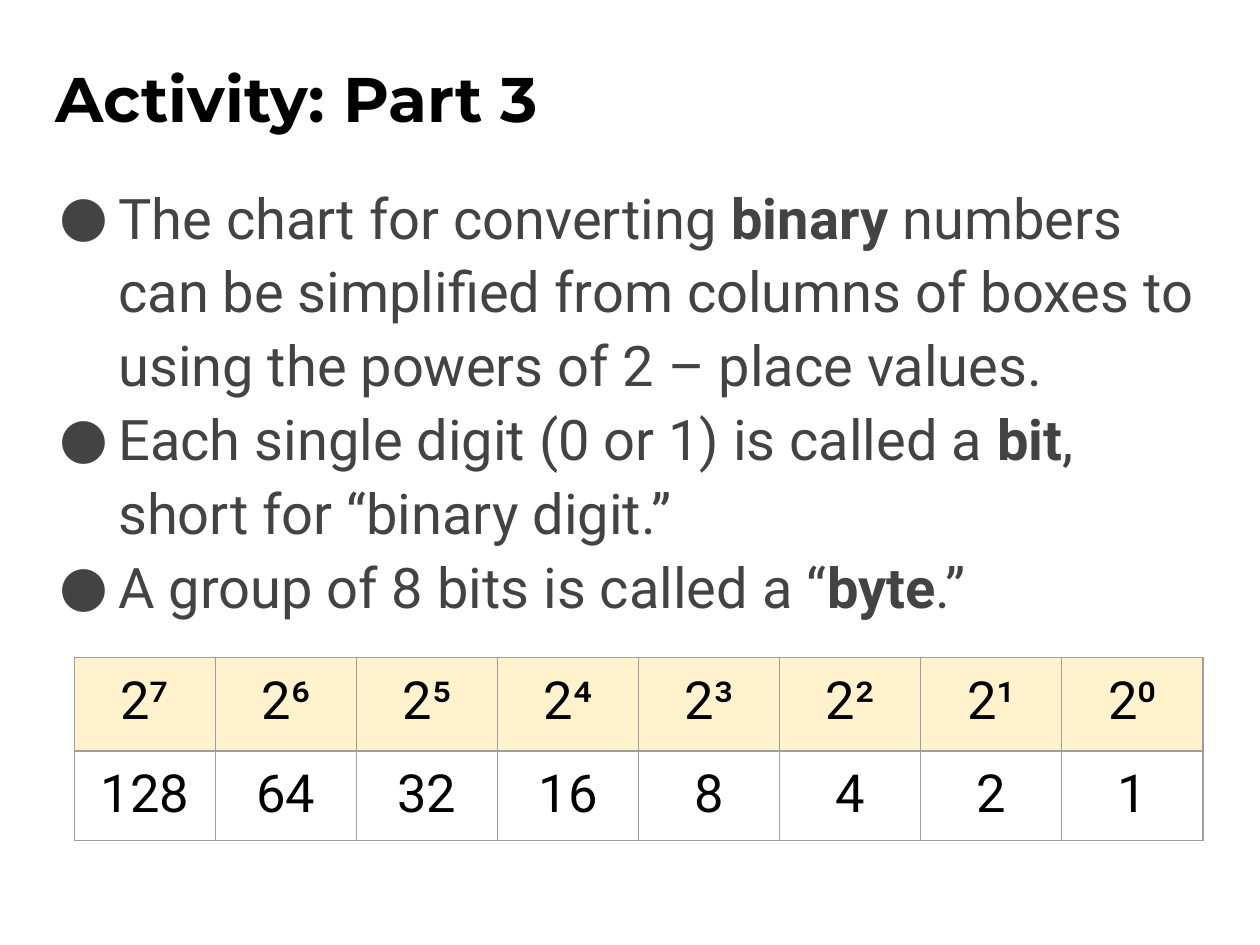
import dataclasses

import pptx
import pptx.dml.color
import pptx.enum.text
import pptx.oxml
import pptx.oxml.ns
import pptx.util
from lxml import etree


@dataclasses.dataclass(frozen=True)
class Theme:
    title_font: str = "Montserrat"
    body_font: str = "Roboto"
    ink: str = "000000"
    body_ink: str = "434343"
    header_fill: str = "FFF2CC"
    rule: str = "9E9E9E"
    title_size: int = 36
    body_size: int = 32
    table_size: int = 30
    rule_width: float = 0.75


THEME = Theme()
WIDTH, HEIGHT = 10, 7.5
MARGIN = 0.34
CONTENT_WIDTH = WIDTH - 2 * MARGIN
BIT_COUNT = 8
COLUMN_WIDTH = 1.12
ROW_HEIGHTS = (0.74, 0.71)
SUPERSCRIPTS = "⁰¹²³⁴⁵⁶⁷"
BULLETS = (
    ("The chart for converting ", "binary",
     " numbers can be simplified from columns of boxes to using the powers of 2 – place values."),
    ("Each single digit (0 or 1) is called a ", "bit", ", short for “binary digit.”"),
    ("A group of 8 bits is called a “", "byte", ".”"),
)


def inches(*lengths):
    return [pptx.util.Inches(length) for length in lengths]


def style_span(span, font, size, color, bold=False):
    span.font.name = font
    span.font.size = pptx.util.Pt(size)
    span.font.bold = bold
    span.font.color.rgb = pptx.dml.color.RGBColor.from_string(color)


def add_xml(parent, tag, **attributes):
    return etree.SubElement(parent, pptx.oxml.ns.qn(tag), attributes)


def add_title(page, text):
    title = page.shapes.title
    title.left, title.top, title.width, title.height = inches(MARGIN, 0.32, CONTENT_WIDTH, 0.91)
    frame = title.text_frame
    frame.text = text
    frame.vertical_anchor = pptx.enum.text.MSO_ANCHOR.MIDDLE
    para = frame.paragraphs[0]
    para.alignment = pptx.enum.text.PP_ALIGN.LEFT
    style_span(para.runs[0], THEME.title_font, THEME.title_size, THEME.ink, True)


def format_bullet(para):
    para.line_spacing = 1.1
    properties = para._p.get_or_add_pPr()
    left, indent = inches(0.5, -0.47)
    properties.set("marL", str(left))
    properties.set("indent", str(indent))
    color = add_xml(properties, "a:buClr")
    add_xml(color, "a:srgbClr", val=THEME.body_ink)
    add_xml(properties, "a:buFont", typeface=THEME.body_font)
    add_xml(properties, "a:buChar", char="●")


def add_bullets(page, bullets):
    box = page.shapes.add_textbox(*inches(MARGIN, 1.35, CONTENT_WIDTH, 4.98))
    frame = box.text_frame
    frame.word_wrap = True
    for index, parts in enumerate(bullets):
        para = frame.add_paragraph() if index else frame.paragraphs[0]
        format_bullet(para)
        for position, text in enumerate(parts):
            span = para.add_run()
            span.text = text
            style_span(span, THEME.body_font, THEME.body_size, THEME.body_ink, position == 1)


def add_borders(cell):
    properties = cell._tc.get_or_add_tcPr()
    for side in ("a:lnL", "a:lnR", "a:lnT", "a:lnB"):
        line = add_xml(properties, side, w=str(pptx.util.Pt(THEME.rule_width)))
        fill = add_xml(line, "a:solidFill")
        add_xml(fill, "a:srgbClr", val=THEME.rule)


def format_cell(cell, text, fill):
    cell.text = text
    cell.margin_left, cell.margin_right, cell.margin_top, cell.margin_bottom = inches(*[0.1] * 4)
    para = cell.text_frame.paragraphs[0]
    para.alignment = pptx.enum.text.PP_ALIGN.CENTER
    style_span(para.runs[0], THEME.body_font, THEME.table_size, THEME.ink)
    add_borders(cell)
    if fill:
        cell.fill.solid()
        cell.fill.fore_color.rgb = pptx.dml.color.RGBColor.from_string(fill)
    else:
        cell.fill.background()


def add_place_values(page):
    bounds = inches(0.59, 5.22, BIT_COUNT * COLUMN_WIDTH, sum(ROW_HEIGHTS))
    table = page.shapes.add_table(len(ROW_HEIGHTS), BIT_COUNT, *bounds).table
    table.first_row = table.horz_banding = False
    for row, height in zip(table.rows, ROW_HEIGHTS):
        row.height = pptx.util.Inches(height)
    for column, power in enumerate(reversed(range(BIT_COUNT))):
        table.columns[column].width = pptx.util.Inches(COLUMN_WIDTH)
        format_cell(table.cell(0, column), "2" + SUPERSCRIPTS[power], THEME.header_fill)
        format_cell(table.cell(1, column), str(2 ** power), None)


def main():
    deck = pptx.Presentation()
    deck.slide_width, deck.slide_height = inches(WIDTH, HEIGHT)
    page = deck.slides.add_slide(deck.slide_layouts[5])
    add_title(page, "Activity: Part 3")
    add_bullets(page, BULLETS)
    add_place_values(page)
    deck.save("out.pptx")


if __name__ == "__main__":
    main()
